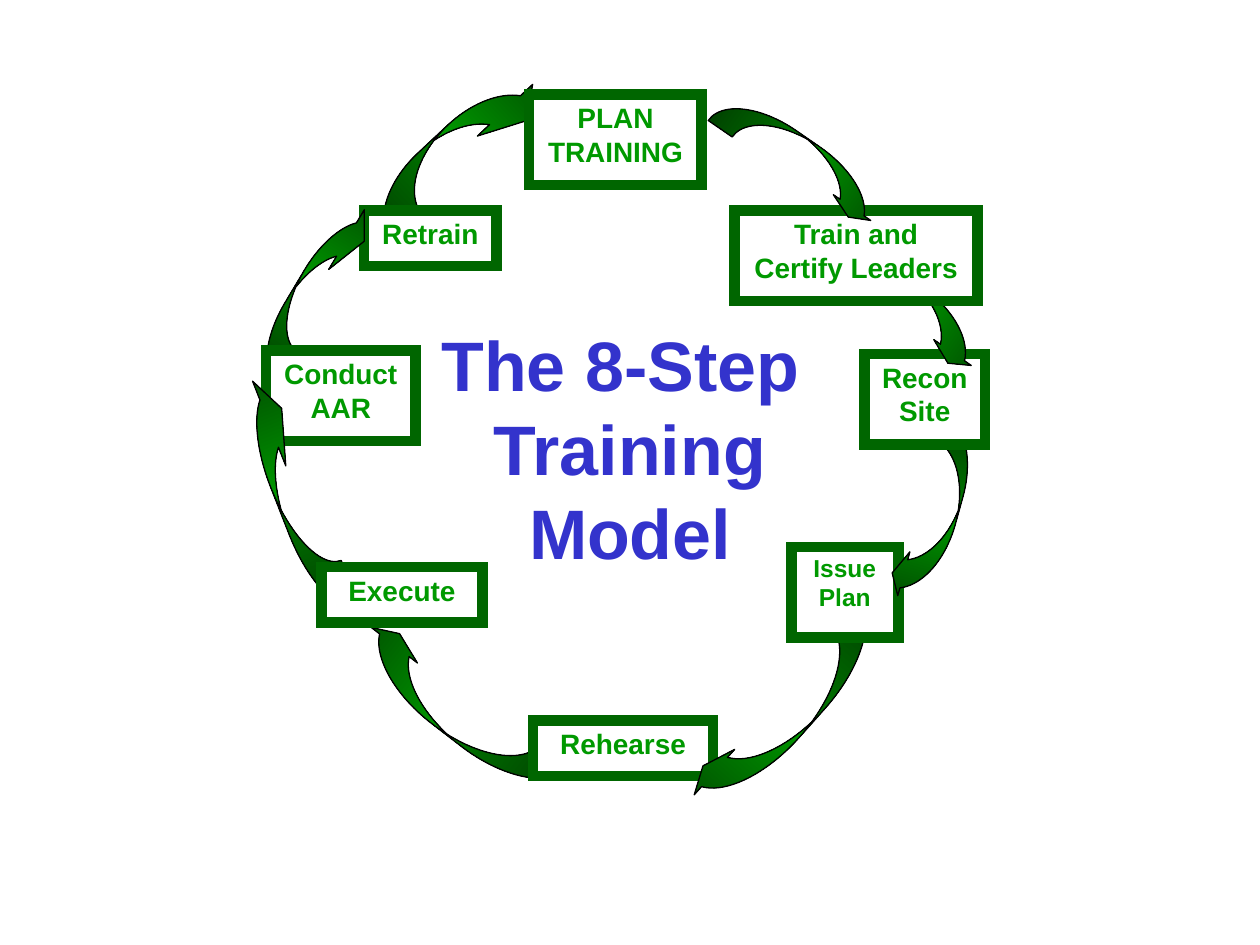
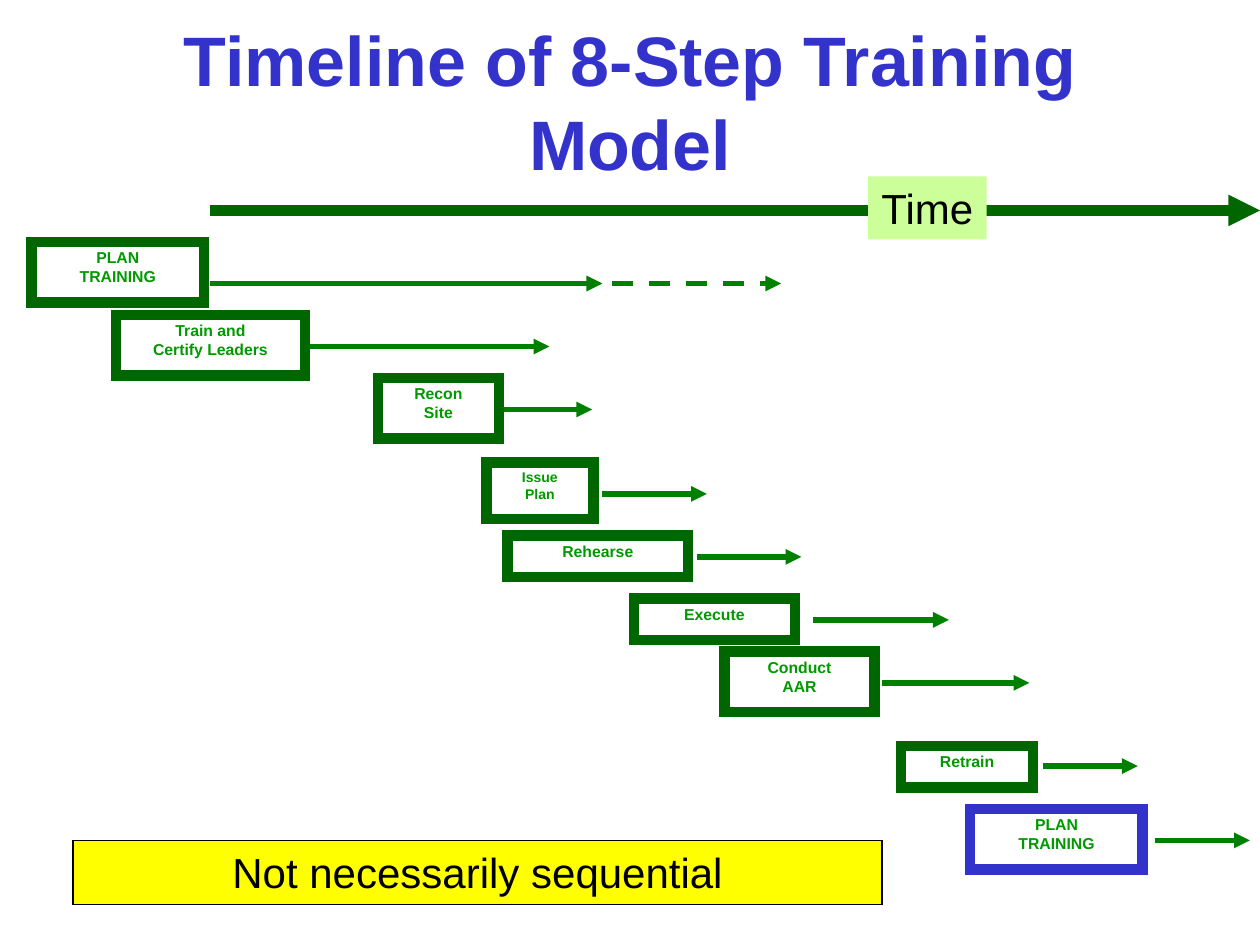
from lxml import etree
from pptx import Presentation
from pptx.dml.color import RGBColor
from pptx.enum.dml import MSO_LINE
from pptx.enum.shapes import MSO_CONNECTOR, MSO_SHAPE
from pptx.enum.text import MSO_ANCHOR, MSO_AUTO_SIZE, PP_ALIGN
from pptx.oxml.ns import qn
from pptx.util import Inches, Pt

RECTANGLE = MSO_SHAPE.RECTANGLE
CURVED_ARROW = MSO_SHAPE.CURVED_LEFT_ARROW
STRAIGHT = MSO_CONNECTOR.STRAIGHT
DASH = MSO_LINE.DASH
TOP, MIDDLE = MSO_ANCHOR.TOP, MSO_ANCHOR.MIDDLE
CENTER = PP_ALIGN.CENTER
NO_AUTOFIT = MSO_AUTO_SIZE.NONE

FONT = "Arial"
TITLE_ONLY = 5
COLORS = {
    "title": "3333CC",
    "step": "009900",
    "border": "006600",
    "arrow": "008000",
    "shade": "004700",
    "white": "FFFFFF",
    "black": "000000",
    "note": "FFFF00",
    "time": "CCFF99",
}

# Step: label, box (left, top, width, height), font size
CYCLE_STEPS = {
    "plan": ("PLAN\nTRAINING", (4.2, 0.75, 1.37, 0.72), 16),
    "train": ("Train and\nCertify Leaders", (5.83, 1.67, 1.93, 0.72), 16),
    "recon": ("Recon\nSite", (6.86, 2.81, 0.96, 0.72), 16),
    "issue": ("Issue\nPlan", (6.28, 4.34, 0.85, 0.72), 14),
    "rehearse": ("Rehearse", (4.23, 5.72, 1.43, 0.44), 16),
    "execute": ("Execute", (2.55, 4.5, 1.28, 0.44), 16),
    "conduct": ("Conduct\nAAR", (2.11, 2.78, 1.19, 0.72), 16),
    "retrain": ("Retrain", (2.89, 1.67, 1.05, 0.44), 16),
}

# Arrow leaving each step: box, rotation, adjustments
CYCLE_ARROWS = {
    "plan": ((6.18, 0.49, 0.33, 1.53), 304.6, (0.7, 1.09, 0.24)),
    "train": ((6.96, 1.63, 0.38, 1.53), 304.6, (0.61, 0.95, 0.24)),
    "recon": ((7.23, 3.27, 0.38, 1.53), 15.5, (0.61, 0.95, 0.24)),
    "issue": ((6.05, 4.6, 0.42, 2.06), 41.7, (0.74, 1.15, 0.24)),
    "rehearse": ((3.43, 4.67, 0.41, 1.95), 127.6, (0.72, 1.13, 0.24)),
    "execute": ((2.18, 2.89, 0.31, 2.06), 158.6, (1.3, 2.33, 0.44)),
    "conduct": ((2.35, 1.49, 0.29, 1.61), 210.8, (1.06, 1.9, 0.44)),
    "retrain": ((3.42, 0.33, 0.4, 1.75), 226.9, (0.84, 1.5, 0.44)),
}
ARROWS_BEHIND_ALL = ("retrain", "rehearse")

# Step, box (left, top, width, height), arrow (start x, end x, y)
TIMELINE = [
    ("plan", (0.25, 1.92, 1.37, 0.48), (1.67, 4.78, 2.25)),
    ("train", (0.92, 2.5, 1.5, 0.48), (2.33, 4.36, 2.75)),
    ("recon", (3, 3, 0.96, 0.48), (4, 4.7, 3.25)),
    ("issue", (3.86, 3.67, 0.85, 0.45), (4.78, 5.61, 3.92)),
    ("rehearse", (4.03, 4.25, 1.43, 0.33), (5.53, 6.36, 4.42)),
    ("execute", (5.03, 4.75, 1.28, 0.33), (6.45, 7.53, 4.92)),
    ("conduct", (5.75, 5.17, 1.19, 0.48), (7, 8.17, 5.42)),
    ("retrain", (7.15, 5.92, 1.05, 0.33), (8.28, 9.03, 6.08)),
    ("plan", (7.7, 6.42, 1.37, 0.48), (9.17, 9.92, 6.67)),
]


def color(name):
    return RGBColor.from_string(COLORS[name])


def inches(lengths):
    return [Inches(length) for length in lengths]


def format_paragraph(paragraph, text, size, font_color, bold):
    """Line breaks in the text stay inside the paragraph."""
    paragraph.text = text
    paragraph.alignment = CENTER
    for run in paragraph.runs:
        run.font.name = FONT
        run.font.size = Pt(size)
        run.font.bold = bold
        run.font.color.rgb = color(font_color)


def write_text(shape, paragraphs, size=24, font_color="black", bold=False,
               anchor=TOP, wrap=True):
    frame = shape.text_frame
    frame.auto_size = NO_AUTOFIT
    frame.word_wrap = wrap
    frame.vertical_anchor = anchor
    for index, text in enumerate(paragraphs):
        paragraph = frame.add_paragraph() if index else frame.paragraphs[0]
        format_paragraph(paragraph, text, size, font_color, bold)


def add_title(slide, text, top, anchor):
    title = slide.shapes.title
    title.left, title.top, title.width, title.height = inches((0.5, top, 9, 1.25))
    write_text(title, [text], size=40, font_color="title", bold=True, anchor=anchor)


def add_box(slide, box, fill, border=None, border_width=1):
    shape = slide.shapes.add_shape(RECTANGLE, *inches(box))
    shape.shadow.inherit = False
    shape.fill.solid()
    shape.fill.fore_color.rgb = color(fill)
    if border:
        shape.line.color.rgb = color(border)
        shape.line.width = Pt(border_width)
        outline = shape.line._get_or_add_ln()
        etree.SubElement(outline, qn("a:miter"), lim="800000")
    else:
        shape.line.fill.background()
    return shape


def add_step(slide, label, box, size, border="border"):
    shape = add_box(slide, box, "white", border, 6)
    write_text(shape, label.split("\n"), size=size, font_color="step", bold=True)


def add_curved_arrow(slide, box, rotation, adjustments):
    shape = slide.shapes.add_shape(CURVED_ARROW, *inches(box))
    shape.shadow.inherit = False
    shape.rotation = rotation
    for index, value in enumerate(adjustments):
        shape.adjustments[index] = value
    shape.line.color.rgb = color("black")
    shape.line.width = Pt(0.75)
    # Three-stop gradient, dark at both ends
    gradient = etree.Element(qn("a:gradFill"), rotWithShape="1")
    stops = etree.SubElement(gradient, qn("a:gsLst"))
    for position, name in ((0, "shade"), (50000, "step"), (100000, "shade")):
        stop = etree.SubElement(stops, qn("a:gs"), pos=str(position))
        etree.SubElement(stop, qn("a:srgbClr"), val=COLORS[name])
    etree.SubElement(gradient, qn("a:lin"), ang="5400000", scaled="1")
    shape._element.spPr.find(qn("a:prstGeom")).addnext(gradient)


def add_arrow(slide, start, end, y, line_color="arrow", width=3, dash=None):
    connector = slide.shapes.add_connector(STRAIGHT, *inches((start, y, end, y)))
    connector.line.color.rgb = color(line_color)
    connector.line.width = Pt(width)
    if dash:
        connector.line.dash_style = dash
    outline = connector.line._get_or_add_ln()
    etree.SubElement(outline, qn("a:tailEnd"), type="triangle")
    etree.SubElement(connector._element.spPr, qn("a:effectLst"))


def build_cycle(slide):
    add_title(slide, "The 8-Step \nTraining\nModel", 2.5, TOP)
    for step in ARROWS_BEHIND_ALL:
        add_curved_arrow(slide, *CYCLE_ARROWS[step])
    # Backwards, so each arrow lies over its target and under its source
    for step in reversed(CYCLE_STEPS):
        if step not in ARROWS_BEHIND_ALL:
            add_curved_arrow(slide, *CYCLE_ARROWS[step])
        add_step(slide, *CYCLE_STEPS[step])


def build_timeline(slide):
    add_title(slide, "Timeline of 8-Step Training Model", 0.17, MIDDLE)

    # Duration arrows, then the steps over them
    for _, _, arrow in TIMELINE:
        add_arrow(slide, *arrow)
    add_arrow(slide, 4.86, 6.2, 2.25, dash=DASH)
    for index, (step, box, _) in enumerate(TIMELINE):
        is_restart = index == len(TIMELINE) - 1
        add_step(slide, CYCLE_STEPS[step][0], box, 8 if step == "issue" else 9,
                 border="title" if is_restart else "border")

    # Note and time axis
    note = add_box(slide, (0.58, 6.67, 6.42, 0.51), "note", "black")
    write_text(note, ["Not necessarily sequential"])
    add_arrow(slide, 1.67, 10, 1.67, line_color="border", width=6)
    time_label = add_box(slide, (6.89, 1.4, 0.94, 0.5), "time")
    write_text(time_label, ["Time"], wrap=False)


def main():
    presentation = Presentation()
    presentation.slide_width = Inches(10)
    presentation.slide_height = Inches(7.5)
    layout = presentation.slide_layouts[TITLE_ONLY]
    for build in (build_cycle, build_timeline):
        build(presentation.slides.add_slide(layout))
    presentation.save("out.pptx")


if __name__ == "__main__":
    main()
